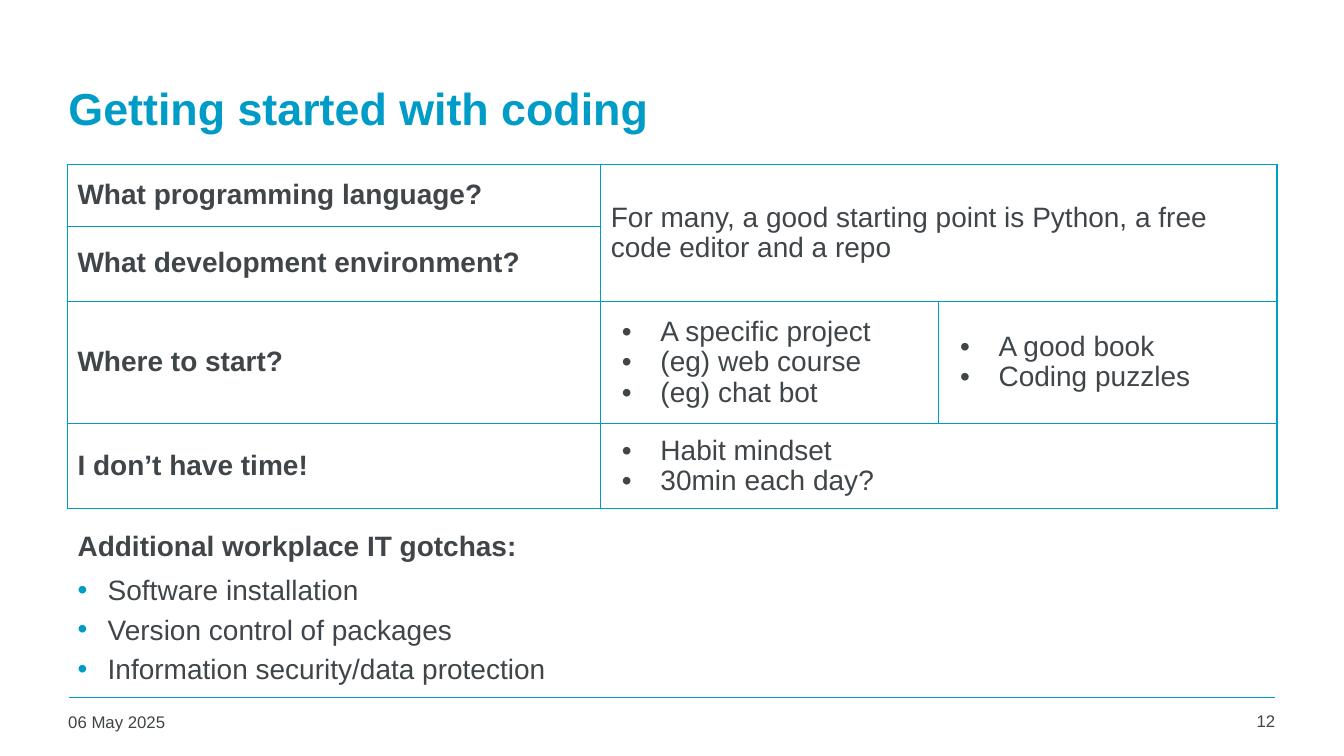
from lxml.etree import SubElement as Sub
from pptx import Presentation
from pptx.dml.color import RGBColor
from pptx.enum.shapes import MSO_CONNECTOR
from pptx.enum.text import MSO_ANCHOR as Anchor, MSO_AUTO_SIZE as AutoSize, PP_ALIGN as Align
from pptx.oxml.ns import qn
from pptx.util import Cm, Pt

COLORS = {"accent": "009CC8", "text": "3F4548"}
COLS = [13.44, 8.52, 8.52]
ROWS = [1.55, 1.85, 3.08, 2.14]
MERGES = [(0, 1, 1, 2), (3, 1, 3, 2)]
QUESTIONS = ["What programming language?", "What development environment?",
             "Where to start?", "I don’t have time!"]
ANSWERS = {
    (2, 1): ["A specific project", "(eg) web course", "(eg) chat bot"],
    (2, 2): ["A good book", "Coding puzzles"],
    (3, 1): ["Habit mindset", "30min each day?"],
}
ADVICE = "For many, a good starting point is Python, a free code editor and a repo"
GOTCHAS = ["Software installation", "Version control of packages",
           "Information security/data protection"]


class Deck:
    """Holds the style and the current slide, and adds each kind of element."""

    def __init__(self):
        self.prs = Presentation()
        self.prs.slide_width, self.prs.slide_height = Cm(33.87), Cm(19.05)
        self.s = self.prs.slides.add_slide(self.prs.slide_layouts[1])

    def rgb(self, name):
        return RGBColor.from_string(COLORS[name])

    def place(self, sp, x, y, w, h):
        sp.left, sp.top, sp.width, sp.height = Cm(x), Cm(y), Cm(w), Cm(h)

    def style(self, p, size=20, bold=False, color="text", align=Align.LEFT):
        p.alignment = align
        p.font.name, p.font.size, p.font.bold = "Arial", Pt(size), bold
        p.font.color.rgb = self.rgb(color)

    def bullet(self, p, indent, hang, color):
        pPr = p._p.get_or_add_pPr()
        pPr.set("marL", str(Cm(indent)))
        pPr.set("indent", str(-Cm(hang)))
        Sub(Sub(pPr, qn("a:buClr")), qn("a:srgbClr"), val=COLORS[color])
        Sub(pPr, qn("a:buFont"), typeface="Arial")
        Sub(pPr, qn("a:buChar"), char="•")

    def title(self, text, *box):
        sp = self.s.shapes.title
        self.place(sp, *box)
        tf = sp.text_frame
        tf.text, tf.auto_size, tf.vertical_anchor = text, AutoSize.NONE, Anchor.MIDDLE
        self.style(tf.paragraphs[0], 32, True, "accent")

    def body(self, heading, items, *box):
        sp = self.s.placeholders[1]
        self.place(sp, *box)
        tf = sp.text_frame
        tf.text = "\n".join([heading, *items])
        tf.auto_size, tf.vertical_anchor = AutoSize.NONE, Anchor.TOP
        for i, p in enumerate(tf.paragraphs):
            p.line_spacing = 1.05
            p.space_before, p.space_after = Pt(3 if i else 0), Pt(0 if i else 3)
            if i:
                self.bullet(p, 0.76, 0.76, "accent")
            else:
                pPr = p._p.get_or_add_pPr()
                pPr.set("marL", "0")
                pPr.set("indent", "0")
                Sub(pPr, qn("a:buNone"))
            self.style(p, bold=not i)

    def text(self, text, align, *box):
        tf = self.s.shapes.add_textbox(*map(Cm, box)).text_frame
        tf.word_wrap, tf.text = True, text
        self.style(tf.paragraphs[0], 12, align=align)

    def line(self, x1, y1, x2, y2):
        c = self.s.shapes.add_connector(MSO_CONNECTOR.STRAIGHT, *map(Cm, (x1, y1, x2, y2)))
        c.line.color.rgb, c.line.width = self.rgb("accent"), Pt(1)
        Sub(c._element.spPr, qn("a:effectLst"))

    def table(self, x, y, cols, rows):
        box = map(Cm, (x, y, sum(cols), sum(rows)))
        tbl = self.s.shapes.add_table(len(rows), len(cols), *box).table
        tbl.first_row = tbl.horz_banding = False
        for col, w in zip(tbl.columns, cols):
            col.width = Cm(w)
        for row, h in zip(tbl.rows, rows):
            row.height = Cm(h)
        for cell in tbl.iter_cells():
            tcPr = cell._tc.get_or_add_tcPr()
            for side in "LRTB":
                ln = Sub(tcPr, qn(f"a:ln{side}"), w=str(Pt(1)))
                Sub(Sub(ln, qn("a:solidFill")), qn("a:srgbClr"), val=COLORS["accent"])
            cell.fill.background()
        return tbl

    def cell(self, cell, lines, bold=False, bulleted=False):
        cell.text, cell.vertical_anchor = "\n".join(lines), Anchor.MIDDLE
        for p in cell.text_frame.paragraphs:
            p.line_spacing = 0.97
            if bulleted:
                self.bullet(p, 1.25, 0.97, "text")
            self.style(p, bold=bold)


def main():
    deck = Deck()
    deck.line(1.73, 17.58, 32.13, 17.58)
    deck.title("Getting started with coding", 1.47, 1.12, 30.7, 3.18)
    deck.text("06 May 2025", Align.LEFT, 1.47, 17.8, 7.47, 0.92)
    deck.text("12", Align.RIGHT, 30, 17.78, 2.39, 0.94)
    tbl = deck.table(1.7, 4.15, COLS, ROWS)
    for r1, c1, r2, c2 in MERGES:
        tbl.cell(r1, c1).merge(tbl.cell(r2, c2))
    for i, question in enumerate(QUESTIONS):
        deck.cell(tbl.cell(i, 0), [question], bold=True)
    deck.cell(tbl.cell(0, 1), [ADVICE])
    for pos, lines in ANSWERS.items():
        deck.cell(tbl.cell(*pos), lines, bulleted=True)
    deck.body("Additional workplace IT gotchas:", GOTCHAS, 1.7, 13.16, 18.64, 4.2)
    deck.prs.save("out.pptx")


if __name__ == "__main__":
    main()
